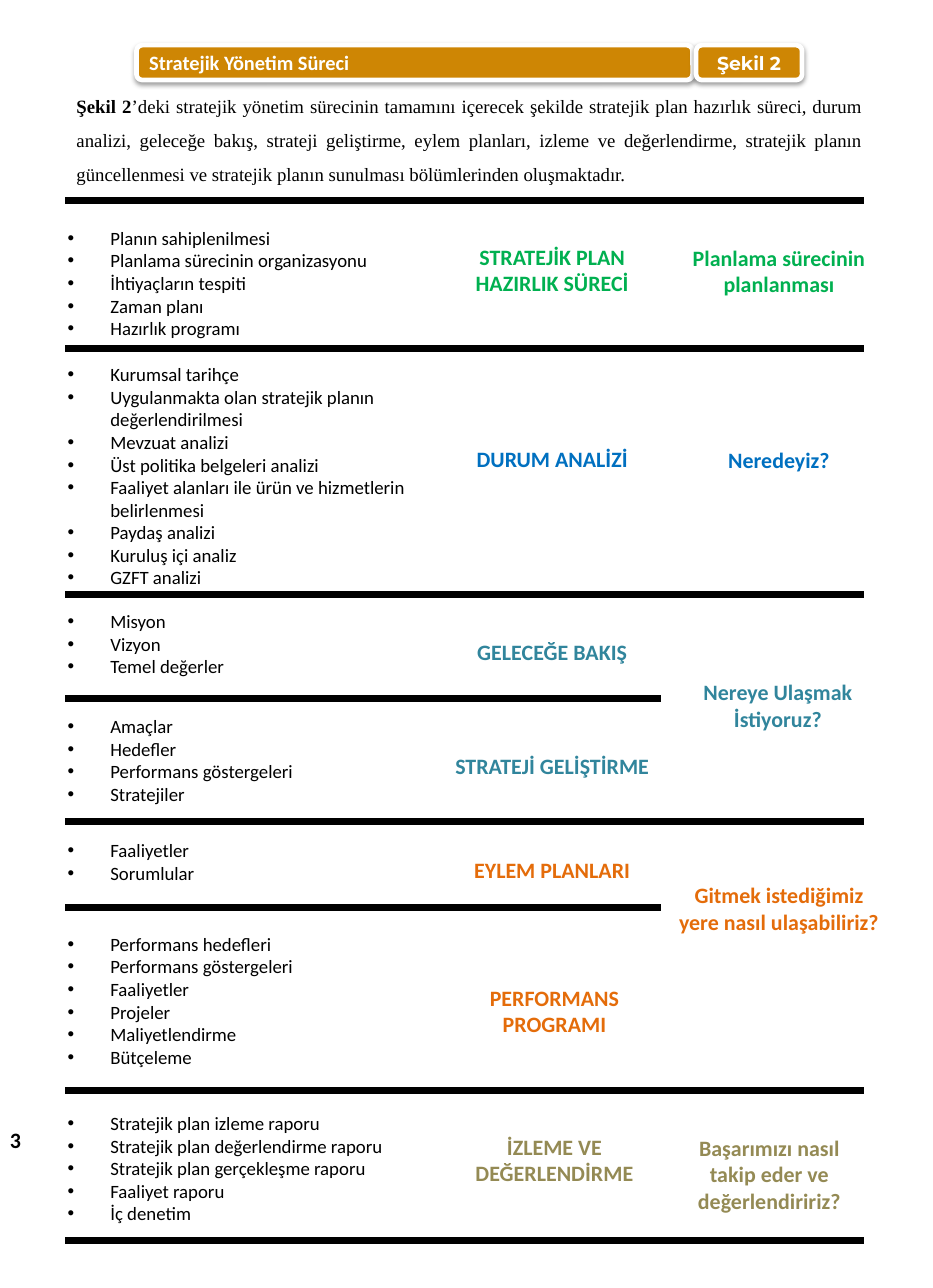
from lxml import etree
from pptx import Presentation
from pptx import util as u
from pptx.dml.color import RGBColor
from pptx.enum import shapes, text
from pptx.oxml import parse_xml
from pptx.oxml.ns import qn

PX = u.Inches(1) // 100  # 100 px to the inch
BLACK, WHITE, OCHRE = "000000", "FFFFFF", "CE8604"
GREEN, BLUE, TEAL, ORANGE, KHAKI = "00B050", "0070C0", "31859C", "E46C0A", "948A54"
CENTER = text.PP_ALIGN.CENTER


def style(paragraph, size, color=BLACK, bold=False, name="Calibri"):
    for run in paragraph.runs:
        run.font.size = u.Pt(size)
        run.font.name = name
        run.font.bold = bold
        run.font.color.rgb = RGBColor.from_string(color)


def add_text(left, top, width, height, content):
    """Add a wrapping text box and return its text frame."""
    box = slide.shapes.add_textbox(left * PX, top * PX, width * PX, height * PX)
    frame = box.text_frame
    frame.word_wrap = True
    frame.auto_size = text.MSO_AUTO_SIZE.SHAPE_TO_FIT_TEXT
    frame.text = content
    return frame


presentation = Presentation()
presentation.slide_width = 827 * PX
presentation.slide_height = 1142 * PX
slide = presentation.slides.add_slide(presentation.slide_layouts[6])

# Title bar and figure number
SHADOW = (
    '<a:effectLst xmlns:a="http://schemas.openxmlformats.org/drawingml/2006/main">'
    '<a:outerShdw blurRad="39370" dist="20320" dir="5400000" rotWithShape="0">'
    '<a:srgbClr val="000000"><a:alpha val="38000"/></a:srgbClr>'
    '</a:outerShdw></a:effectLst>'
)
header = slide.shapes.add_group_shape()
for left, width, caption, size, font, align in [
    (121, 493, "Stratejik Yönetim Süreci", 13, "Calibri", text.PP_ALIGN.LEFT),
    (617, 94, "Şekil 2", 12, "Montserrat", CENTER),
]:
    shape = header.shapes.add_shape(
        shapes.MSO_SHAPE.ROUNDED_RECTANGLE, left * PX, 40 * PX, width * PX, 31 * PX)
    shape.fill.solid()
    shape.fill.fore_color.rgb = RGBColor.from_string(OCHRE)
    shape.line.color.rgb = RGBColor.from_string(WHITE)
    shape.line.width = u.Pt(3)
    shape._element.spPr.append(parse_xml(SHADOW))
    shape.text_frame.text = caption
    shape.text_frame.vertical_anchor = text.MSO_ANCHOR.MIDDLE
    paragraph = shape.text_frame.paragraphs[0]
    paragraph.alignment = align
    style(paragraph, size, WHITE, True, font)

# Introduction
paragraph = add_text(58, 69, 717, 97, "Şekil 2").paragraphs[0]
paragraph.add_run().text = (
    "’deki stratejik yönetim sürecinin tamamını içerecek şekilde stratejik plan "
    "hazırlık süreci, durum analizi, geleceğe bakış, strateji geliştirme, eylem "
    "planları, izleme ve değerlendirme, stratejik planın güncellenmesi ve stratejik "
    "planın sunulması bölümlerinden oluşmaktadır.")
paragraph.alignment = text.PP_ALIGN.JUSTIFY
paragraph.line_spacing = 1.5
paragraph.space_after = u.Pt(10)
style(paragraph, 12, name="Times New Roman")
paragraph.runs[0].font.bold = True

# Dividing rules: y, right end
FULL, PARTIAL = 766, 586
for y, right in [(178, FULL), (309, FULL), (527, FULL), (619, PARTIAL),
                 (728, FULL), (805, PARTIAL), (967, FULL), (1100, FULL)]:
    rule = slide.shapes.add_connector(
        shapes.MSO_CONNECTOR.STRAIGHT, 58 * PX, y * PX, right * PX, y * PX)
    rule.line.color.rgb = RGBColor.from_string(BLACK)
    rule.line.width = u.Pt(4.5)
    etree.SubElement(rule._element.spPr, qn("a:effectLst"))

# Step lists: top, entries
CONTINUATIONS = {"değerlendirilmesi", "belirlenmesi"}
step_lists = [
    (196, ["Planın sahiplenilmesi", "Planlama sürecinin organizasyonu",
           "İhtiyaçların tespiti", "Zaman planı", "Hazırlık programı"]),
    (317, ["Kurumsal tarihçe", "Uygulanmakta olan stratejik planın",
           "değerlendirilmesi", "Mevzuat analizi", "Üst politika belgeleri analizi",
           "Faaliyet alanları ile ürün ve hizmetlerin", "belirlenmesi",
           "Paydaş analizi", "Kuruluş içi analiz", "GZFT analizi"]),
    (536, ["Misyon", "Vizyon", "Temel değerler"]),
    (629, ["Amaçlar", "Hedefler", "Performans göstergeleri", "Stratejiler"]),
    (739, ["Faaliyetler", "Sorumlular"]),
    (822, ["Performans hedefleri", "Performans göstergeleri", "Faaliyetler",
           "Projeler", "Maliyetlendirme", "Bütçeleme"]),
    (981, ["Stratejik plan izleme raporu", "Stratejik plan değerlendirme raporu",
           "Stratejik plan gerçekleşme raporu", "Faaliyet raporu", "İç denetim"]),
]
for top, entries in step_lists:
    frame = add_text(50, top, 582, round(10 + 20.2 * len(entries)), "\n".join(entries))
    for paragraph, entry in zip(frame.paragraphs, entries):
        properties = paragraph._p.get_or_add_pPr()
        properties.set("marL", str(38 * PX))
        if entry in CONTINUATIONS:
            properties.set("indent", "0")
        else:
            properties.set("indent", str(-38 * PX))
            etree.SubElement(properties, qn("a:buFont")).set("typeface", "Arial")
            etree.SubElement(properties, qn("a:buChar")).set("char", "•")
        style(paragraph, 12)

# Stages and guiding questions: left, top, width, line count, colour, wording
LINE_HEIGHTS = {1: 34, 2: 57, 3: 81}
for left, top, width, lines, color, wording in [
    (389, 211, 201, 2, GREEN, "STRATEJİK PLAN HAZIRLIK SÜRECİ"),
    (590, 212, 201, 2, GREEN, "Planlama sürecinin planlanması"),
    (389, 390, 201, 1, BLUE, "DURUM ANALİZİ"),
    (590, 391, 201, 1, BLUE, "Neredeyiz?"),
    (389, 561, 201, 1, TEAL, "GELECEĞE BAKIŞ"),
    (589, 597, 201, 2, TEAL, "Nereye Ulaşmak İstiyoruz?"),
    (389, 662, 201, 1, TEAL, "STRATEJİ GELİŞTİRME"),
    (389, 755, 201, 1, ORANGE, "EYLEM PLANLARI"),
    (590, 777, 201, 2, ORANGE, "Gitmek istediğimiz yere nasıl ulaşabiliriz?"),
    (391, 868, 201, 2, ORANGE, "PERFORMANS PROGRAMI"),
    (391, 1000, 201, 2, KHAKI, "İZLEME VE DEĞERLENDİRME"),
    (589, 1001, 186, 3, KHAKI, "Başarımızı nasıl takip eder ve değerlendiririz?"),
]:
    paragraph = add_text(left, top, width, LINE_HEIGHTS[lines], wording).paragraphs[0]
    paragraph.alignment = CENTER
    style(paragraph, 14, color, True)

# Page number
style(add_text(-1, 994, 51, 34, "3").paragraphs[0], 14, bold=True)

presentation.save("out.pptx")
